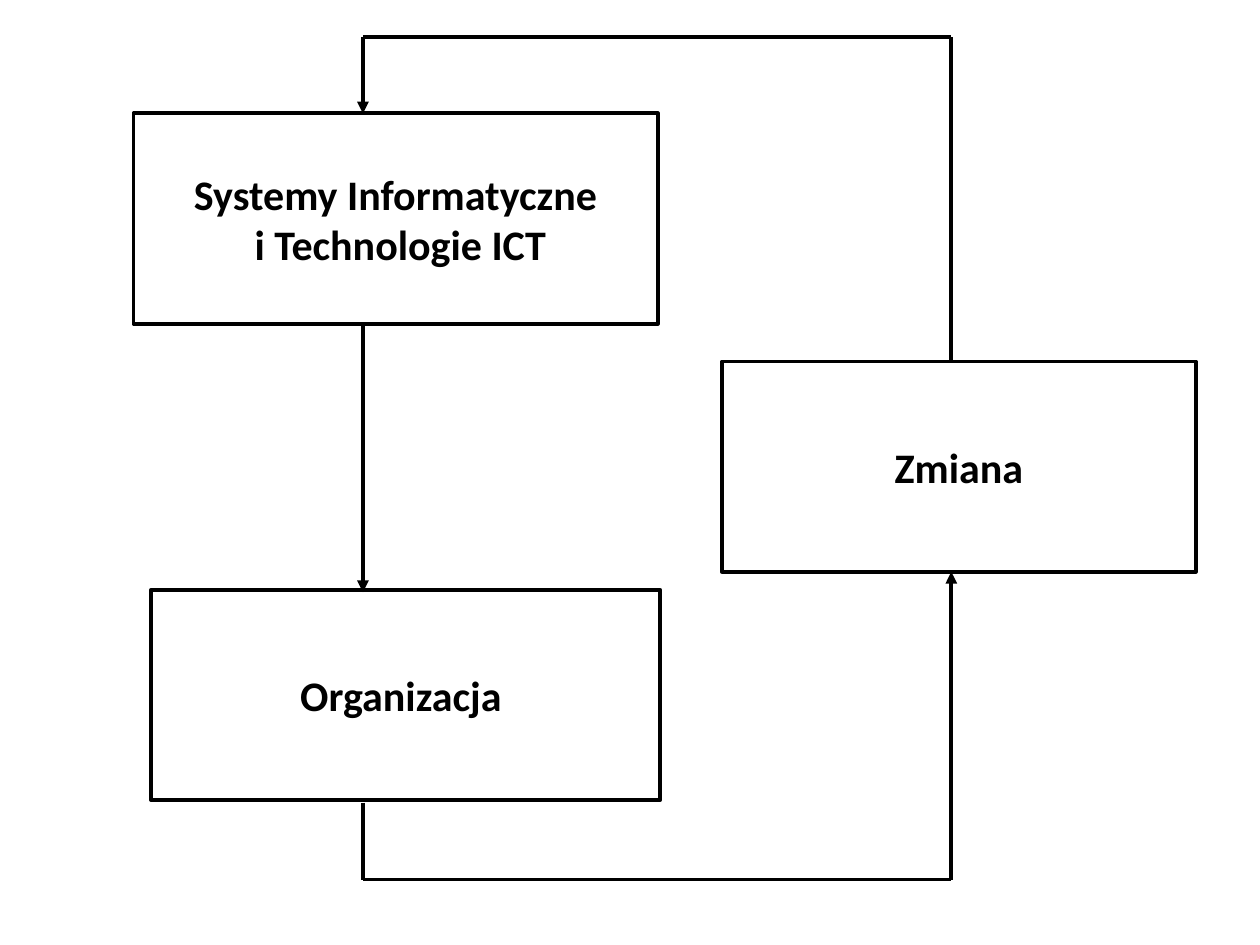
from dataclasses import dataclass

from lxml.etree import SubElement
from pptx import Presentation
from pptx.dml.color import RGBColor
from pptx.enum.shapes import MSO_CONNECTOR, MSO_SHAPE
from pptx.enum.text import MSO_ANCHOR, PP_ALIGN
from pptx.oxml.ns import qn
from pptx.util import Pt


@dataclass(frozen=True)
class Theme:
    ink: RGBColor = RGBColor(0, 0, 0)
    paper: RGBColor = RGBColor(255, 255, 255)
    font: str = "Calibri"
    label_size: float = 24
    line_width: float = 2.25


THEME = Theme()
BOX_HEIGHT = 120.2


def add_box(slide, left, top, width, lines):
    box = slide.shapes.add_shape(
        MSO_SHAPE.RECTANGLE, Pt(left), Pt(top), Pt(width), Pt(BOX_HEIGHT)
    )
    box.shadow.inherit = False
    box.fill.solid()
    box.fill.fore_color.rgb = THEME.paper
    box.line.color.rgb = THEME.ink
    box.line.width = Pt(THEME.line_width)
    label = box.text_frame
    label.word_wrap = False
    label.vertical_anchor = MSO_ANCHOR.MIDDLE
    label.text = "\n".join(lines)
    for paragraph in label.paragraphs:
        paragraph.alignment = PP_ALIGN.CENTER
        paragraph.font.name = THEME.font
        paragraph.font.size = Pt(THEME.label_size)
        paragraph.font.bold = True
        paragraph.font.color.rgb = THEME.ink


def add_segment(slide, start, end, arrow):
    segment = slide.shapes.add_connector(
        MSO_CONNECTOR.STRAIGHT, *map(Pt, start), *map(Pt, end)
    )
    segment.line.color.rgb = THEME.ink
    segment.line.width = Pt(THEME.line_width)
    if arrow:
        SubElement(segment.line._get_or_add_ln(), qn("a:tailEnd"), type="triangle")
    SubElement(segment._element.spPr, qn("a:effectLst"))


def add_route(slide, points, arrow=True):
    last = len(points) - 2
    for index, (start, end) in enumerate(zip(points, points[1:])):
        add_segment(slide, start, end, arrow and index == last)


def main():
    presentation = Presentation()
    presentation.slide_width = Pt(720)
    presentation.slide_height = Pt(540)
    slide = presentation.slides.add_slide(presentation.slide_layouts[6])

    systems_top, organization_top, change_top = 64.8, 337, 206.6
    add_box(slide, 76.3, systems_top, 299.5,
            ["Systemy Informatyczne", " i Technologie ICT"])
    add_box(slide, 86.4, organization_top, 290.9, ["Organizacja "])
    add_box(slide, 412.6, change_top, 270.7, ["Zmiana"])

    left_x, right_x = 207.4, 543.6
    upper_y, lower_y = 20.9, 502.6
    add_route(slide, [(left_x, systems_top + BOX_HEIGHT),
                      (left_x, organization_top + 1.4)])
    add_route(slide, [(left_x, organization_top + BOX_HEIGHT + 1.4),
                      (left_x, lower_y), (right_x, lower_y),
                      (right_x, change_top + BOX_HEIGHT)])
    add_route(slide, [(right_x, change_top), (right_x, upper_y),
                      (left_x, upper_y), (left_x, systems_top)])

    presentation.save("out.pptx")


if __name__ == "__main__":
    main()
